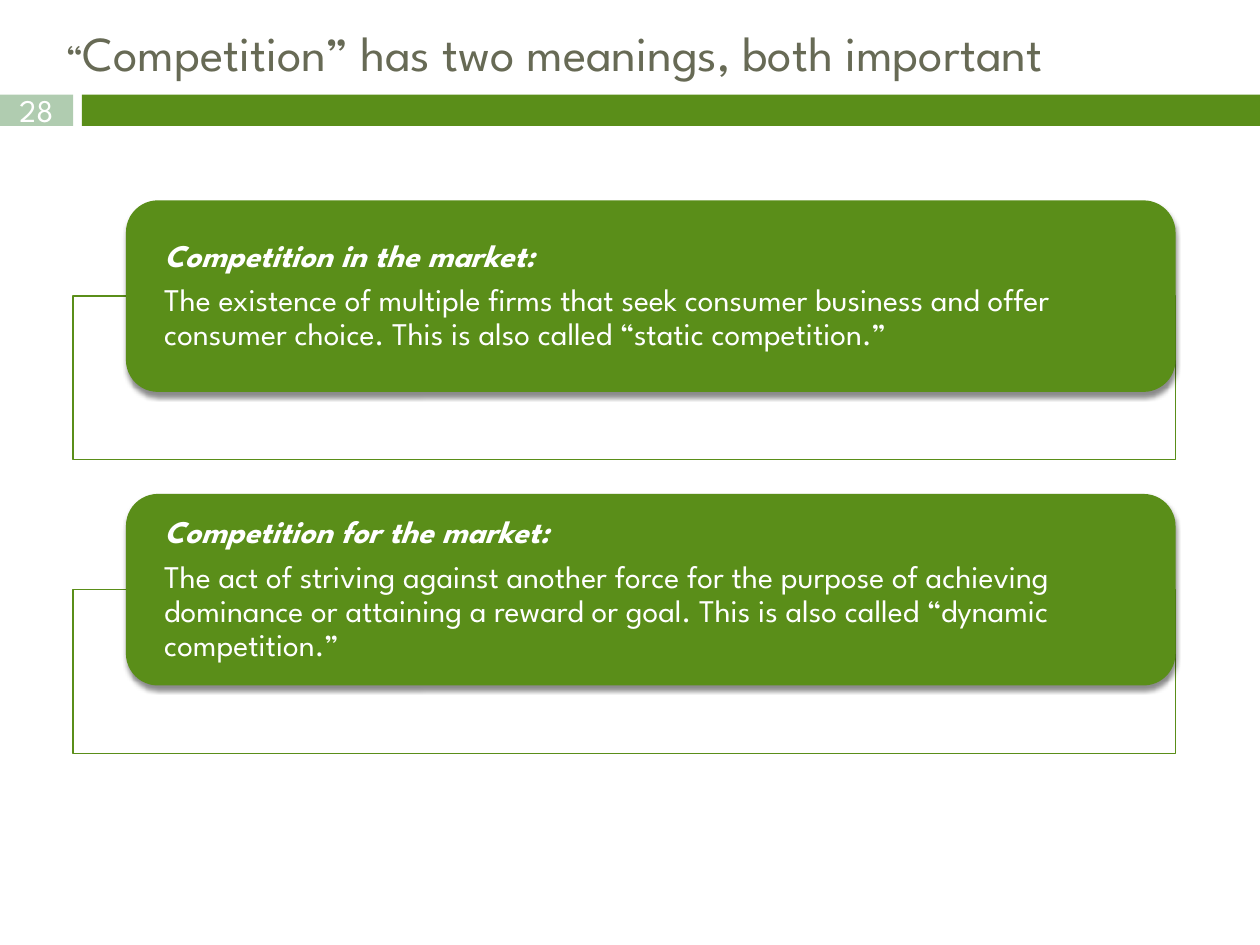
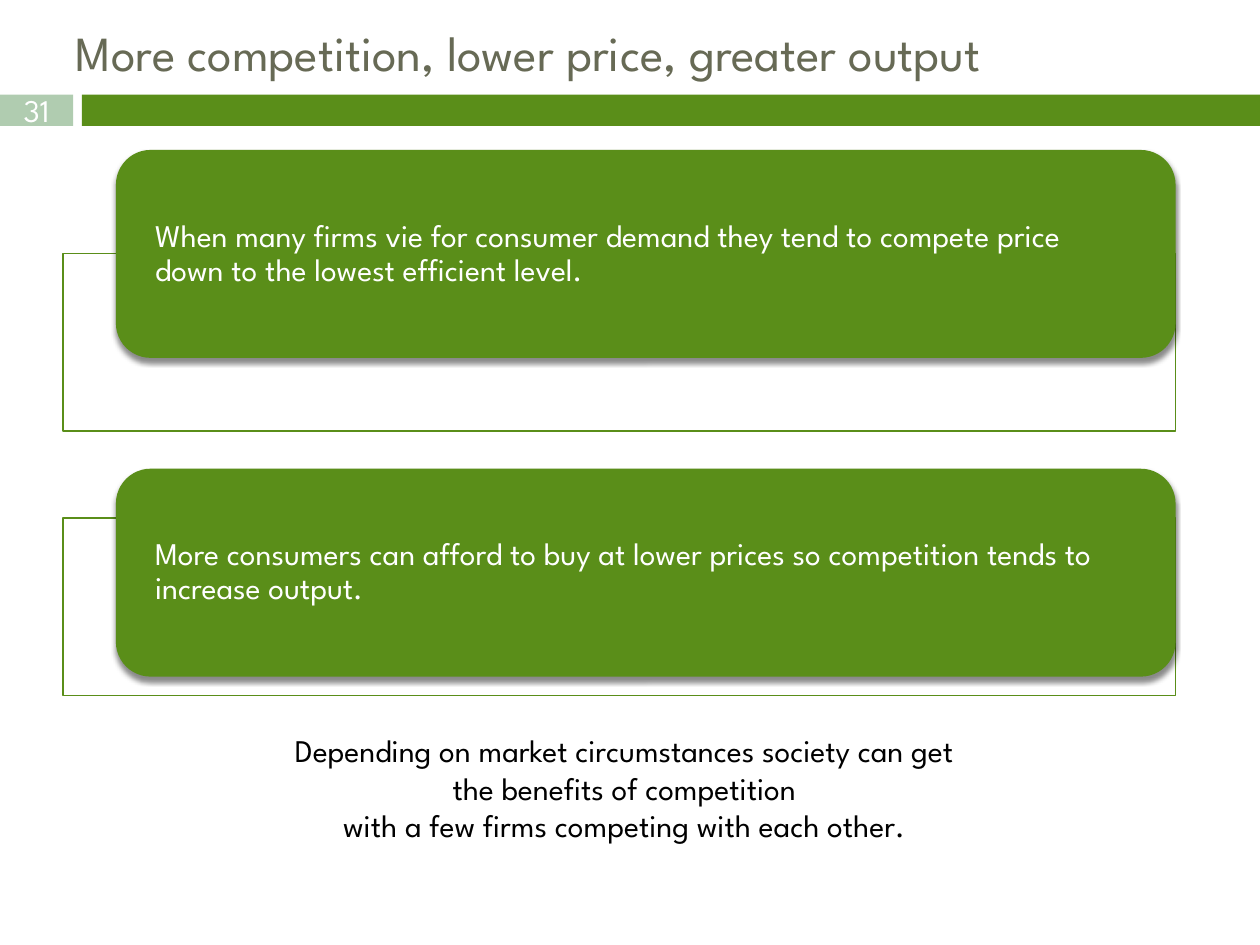
from lxml import etree
from pptx import Presentation
from pptx.dml.color import RGBColor
from pptx.enum.shapes import MSO_SHAPE as Shape
from pptx.enum.text import MSO_ANCHOR as Anchor, MSO_AUTO_SIZE as AutoSize, PP_ALIGN as Align
from pptx.oxml import parse_xml
from pptx.oxml.ns import nsdecls, qn
from pptx.util import Inches, Pt

GREEN = RGBColor(0x5A, 0x8E, 0x19)
SAGE = RGBColor(0xB0, 0xCC, 0xB0)
OLIVE = RGBColor(0x67, 0x6A, 0x55)
WHITE = RGBColor(0xFF, 0xFF, 0xFF)
BLACK = RGBColor(0, 0, 0)
FONT = "League Spartan"
TITLE_ONLY = 5
BAND_TOP, BAND_HEIGHT = 0.75, 0.25
RIGHT_EDGE = 9.33  # shared by frames and cards
CARD_INDENT = 0.42  # from frame to card

CARD_SHADOW = (
    f'<a:effectLst {nsdecls("a")}>'
    f'<a:outerShdw blurRad="{Pt(3)}" dist="{Pt(2.4)}" dir="5400000" rotWithShape="0">'
    '<a:srgbClr val="000000"><a:alpha val="45000"/></a:srgbClr>'
    '</a:outerShdw></a:effectLst>'
)


def add_run(paragraph, text, size=18, color=WHITE, bold=False, italic=False):
    """Append formatted text to a paragraph."""
    run = paragraph.add_run()
    run.text = text
    font = run.font
    font.name, font.size, font.bold, font.italic = FONT, Pt(size), bold, italic
    font.color.rgb = color


class Deck:
    def __init__(self):
        self.prs = Presentation()
        self.prs.slide_width, self.prs.slide_height = Inches(10), Inches(7.5)
        self.slide = None

    def new_slide(self, number, left, *title_parts):
        """Start a slide with band, number and title; parts are (text, size)."""
        self.slide = self.prs.slides.add_slide(self.prs.slide_layouts[TITLE_ONLY])
        number_tab = self.box(Shape.RECTANGLE, 0, BAND_TOP, 0.58, BAND_HEIGHT, SAGE)
        self.fill_text(number_tab.text_frame, [(str(number), {})],
                       align=Align.CENTER, inset=0)
        self.box(Shape.RECTANGLE, 0.65, BAND_TOP, 9.35, BAND_HEIGHT, GREEN)

        title = self.slide.shapes.title
        title.left, title.top = Inches(left), Inches(0.17)
        title.width, title.height = Inches(10), Inches(0.48)
        frame = title.text_frame
        frame.auto_size = AutoSize.NONE
        frame.vertical_anchor = Anchor.MIDDLE
        heading = frame.paragraphs[0]
        heading.alignment = Align.LEFT
        for text, size in title_parts:
            add_run(heading, text, size=size, color=OLIVE)

    def box(self, kind, left, top, width, height, color):
        shape = self.slide.shapes.add_shape(
            kind, Inches(left), Inches(top), Inches(width), Inches(height))
        shape.shadow.inherit = False
        shape.fill.solid()
        shape.fill.fore_color.rgb = color
        shape.line.fill.background()
        return shape

    def fill_text(self, frame, paragraphs, align=Align.LEFT, inset=0.1,
                  spacing=None, gap=0, anchor=Anchor.MIDDLE):
        """Write (text, format) pairs, one paragraph each."""
        frame.word_wrap = True
        frame.vertical_anchor = anchor
        frame.margin_left = frame.margin_right = Inches(inset)
        frame.margin_top = frame.margin_bottom = Inches(0)
        for index, (text, style) in enumerate(paragraphs):
            paragraph = frame.add_paragraph() if index else frame.paragraphs[0]
            paragraph.alignment = align
            paragraph.line_spacing = spacing
            if index and gap:
                paragraph.space_before = Pt(gap)
            add_run(paragraph, text, **style)

    def frame(self, left, top, height):
        outline = self.box(Shape.RECTANGLE, left, top, RIGHT_EDGE - left, height, WHITE)
        outline.line.color.rgb = GREEN
        outline.line.width = Pt(0.79)
        fill_color = outline.fill._xPr.find(qn("a:solidFill"))[0]
        etree.SubElement(fill_color, qn("a:alpha")).set("val", "90000")

    def card(self, left, top, height, paragraphs):
        card = self.box(Shape.ROUNDED_RECTANGLE, left, top, RIGHT_EDGE - left, height, GREEN)
        properties = card._element.spPr
        properties.replace(properties.find(qn("a:effectLst")), parse_xml(CARD_SHADOW))
        self.fill_text(card.text_frame, paragraphs, inset=0.23, spacing=0.9, gap=6)

    def framed_card(self, left, frame_top, frame_height, card_top, card_height, paragraphs):
        self.frame(left, frame_top, frame_height)
        self.card(left + CARD_INDENT, card_top, card_height, paragraphs)

    def note(self, left, top, width, height, lines):
        note = self.slide.shapes.add_textbox(
            Inches(left), Inches(top), Inches(width), Inches(height))
        self.fill_text(note.text_frame, [(line, {"color": BLACK}) for line in lines],
                       align=Align.CENTER, anchor=Anchor.TOP)
        note.text_frame.margin_top = note.text_frame.margin_bottom = Inches(0.05)


def main():
    deck = Deck()

    # Two meanings of competition
    deck.new_slide(28, 0.42, ("“", 21.6),
                   ("Competition” has two meanings, both important", 27.9))
    meanings = [
        ("Competition in the market:",
         "The existence of multiple firms that seek consumer business and offer "
         "consumer choice. This is also called “static competition.”"),
        ("Competition for the market:",
         "The act of striving against another force for the purpose of achieving "
         "dominance or attaining a reward or goal. This is also called "
         "“dynamic competition.”"),
    ]
    for index, (term, definition) in enumerate(meanings):
        card_top = 1.59 + index * 2.33
        deck.framed_card(0.58, card_top + 0.76, 1.3, card_top, 1.52,
                         [(term, {"bold": True, "italic": True}), (definition, {})])

    # Effects on price and output
    deck.new_slide(31, 0.5, ("More competition, lower price, greater output", 28))
    effects = [
        (2.01, 1.19, "When many firms vie for consumer demand they tend to compete "
                     "price down to the lowest efficient level."),
        (4.11, 3.72, "More consumers can afford to buy at lower prices so competition "
                     "tends to increase output."),
    ]
    for frame_top, card_top, effect in effects:
        deck.framed_card(0.5, frame_top, 1.41, card_top, 1.65, [(effect, {})])
    deck.note(0.58, 5.75, 8.75, 1.01, [
        "Depending on market circumstances society can get",
        "the benefits of competition",
        "with a few firms competing with each other.",
    ])

    deck.prs.save("out.pptx")


if __name__ == "__main__":
    main()
